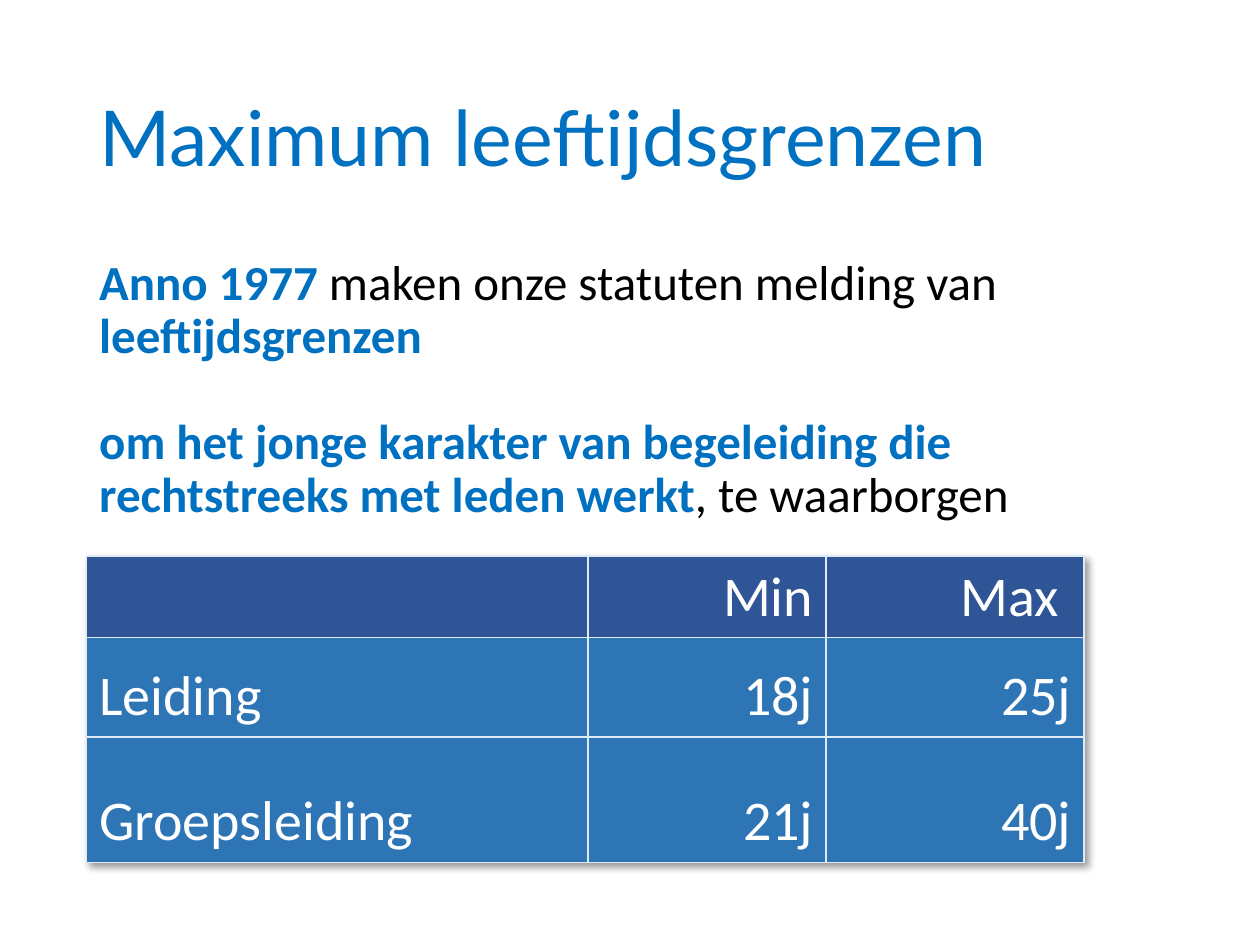
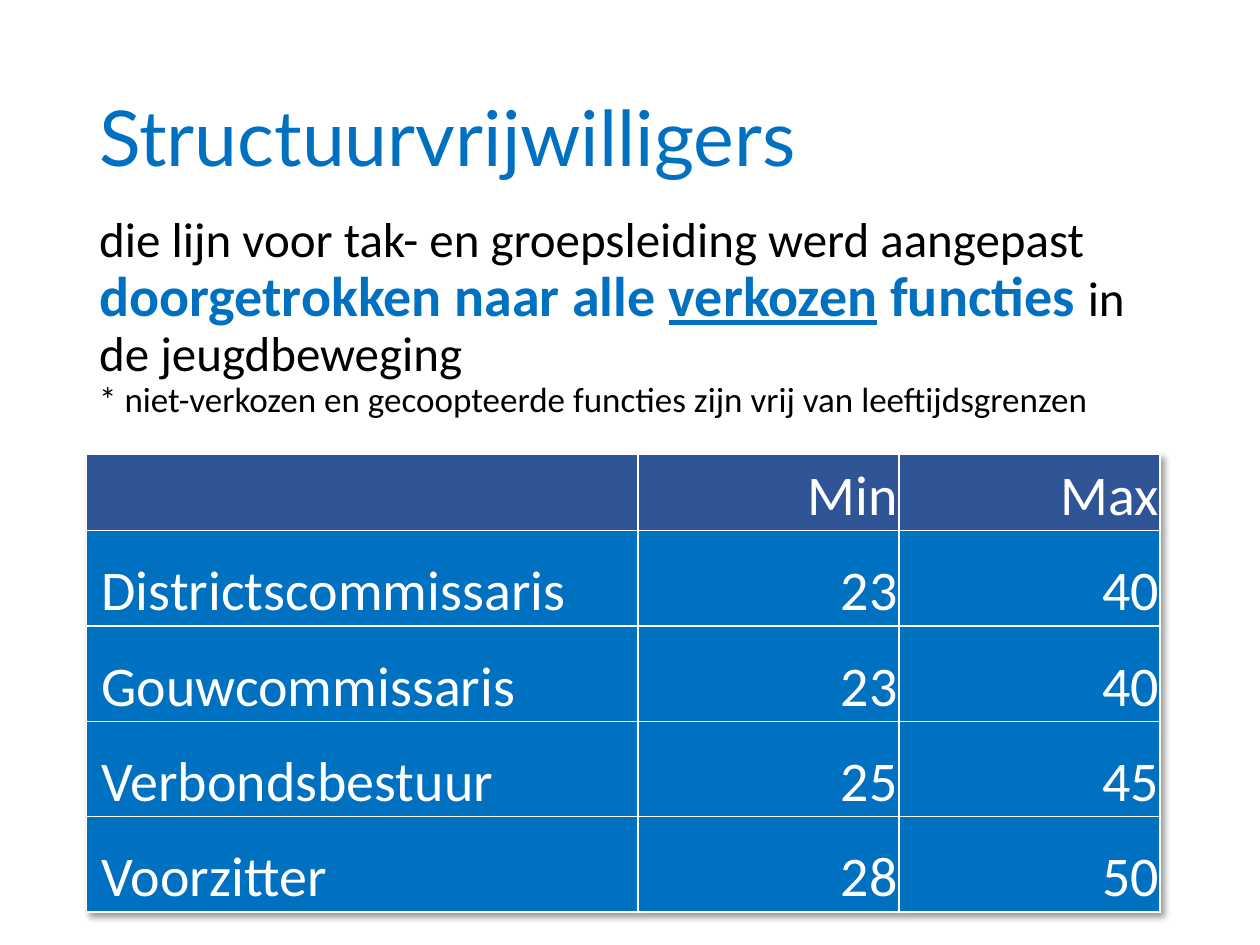
from pptx import Presentation
from pptx.dml.color import RGBColor
from pptx.enum.text import MSO_ANCHOR, MSO_AUTO_SIZE, PP_ALIGN
from pptx.oxml import parse_xml
from pptx.oxml.ns import nsdecls
from pptx.util import Pt

COLORS = {
    "accent": "0070C0",
    "text": "000000",
    "header": "2F5597",
    "row": "2E75B6",
    "pale": "DEEBF7",
    "white": "FFFFFF",
}
LEFT, WIDTH = 49.5, 621
STRONG = {"color": "accent", "bold": True}
LARGE = {**STRONG, "size": 32}


def rgb(name):
    return RGBColor.from_string(COLORS[name])


def add_run(p, text, size=28, font="Calibri", color="text", bold=False, underline=False):
    r = p.add_run()
    r.text = text
    r.font.size = Pt(size)
    r.font.name = font
    r.font.color.rgb = rgb(color)
    r.font.bold = bold
    r.font.underline = underline


class Deck:
    def __init__(self):
        self.prs = Presentation()
        self.prs.slide_width, self.prs.slide_height = Pt(720), Pt(540)
        self.s = None

    def slide(self, title):
        self.s = self.prs.slides.add_slide(self.prs.slide_layouts[1])
        tf = self.place(self.s.shapes.title, 28.75, 104.4)
        tf.vertical_anchor = MSO_ANCHOR.MIDDLE
        p = tf.paragraphs[0]
        p.alignment = PP_ALIGN.LEFT
        p.line_spacing = 0.9
        add_run(p, title, size=44, font="Lato", color="accent")

    def place(self, sp, top, height):
        sp.left, sp.top = Pt(LEFT), Pt(top)
        sp.width, sp.height = Pt(WIDTH), Pt(height)
        tf = sp.text_frame
        tf.word_wrap = True
        tf.auto_size = MSO_AUTO_SIZE.NONE
        return tf

    def body(self, top, height, paragraphs, gap=0):
        tf = self.place(self.s.placeholders[1], top, height)
        for i, runs in enumerate(paragraphs):
            p = tf.add_paragraph() if i else tf.paragraphs[0]
            pPr = p._p.get_or_add_pPr()
            pPr.set("marL", "0")
            pPr.set("indent", "0")
            pPr.append(parse_xml(f"<a:buNone {nsdecls('a')}/>"))
            p.line_spacing = 0.9
            p.space_before = Pt(gap if i else 0)
            for text, fmt in runs:
                add_run(p, text, **fmt)

    def table(self, top, cols, rows, data, fill, border, insets=None):
        frame = self.s.shapes.add_table(
            len(rows), len(cols), Pt(LEFT), Pt(top), Pt(sum(cols)), Pt(sum(rows)))
        tbl = frame.table
        tbl.horz_banding = False
        self.table_shadow(tbl)
        for col, width in zip(tbl.columns, cols):
            col.width = Pt(width)
        for row, height in zip(tbl.rows, rows):
            row.height = Pt(height)
        for i, values in enumerate(data):
            for j, text in enumerate(values):
                cell = tbl.cell(i, j)
                cell.fill.solid()
                cell.fill.fore_color.rgb = rgb(fill if i else "header")
                self.cell_border(cell, border)
                cell.vertical_anchor = MSO_ANCHOR.BOTTOM
                if insets:
                    (cell.margin_left, cell.margin_top,
                     cell.margin_right, cell.margin_bottom) = map(Pt, insets)
                if text:
                    p = cell.text_frame.paragraphs[0]
                    p.alignment = PP_ALIGN.RIGHT if j else PP_ALIGN.LEFT
                    add_run(p, text, size=32, color="white")

    def table_shadow(self, tbl):
        tbl._tbl.tblPr.insert(0, parse_xml(
            f"<a:effectLst {nsdecls('a')}>"
            '<a:outerShdw blurRad="50800" dist="38100" dir="2700000" algn="tl" rotWithShape="0">'
            f'<a:srgbClr val="{COLORS["text"]}"><a:alpha val="40000"/></a:srgbClr>'
            "</a:outerShdw></a:effectLst>"))

    def cell_border(self, cell, color):
        tcPr = cell._tc.get_or_add_tcPr()
        for i, side in enumerate("LRTB"):
            tcPr.insert(i, parse_xml(
                f'<a:ln{side} {nsdecls("a")} w="{Pt(1)}"><a:solidFill>'
                f'<a:srgbClr val="{COLORS[color]}"/></a:solidFill></a:ln{side}>'))


def main():
    deck = Deck()

    deck.slide("Maximum leeftijdsgrenzen")
    deck.body(144, 131.75, [
        [("Anno 1977 ", STRONG), ("maken onze statuten melding van ", {}),
         ("leeftijdsgrenzen", STRONG)],
        [("om het jonge karakter van begeleiding die rechtstreeks met leden werkt", STRONG),
         (", te waarborgen", {})],
    ], gap=30.5)
    deck.table(317.75, [286.5, 136, 147.5], [46.5, 57, 71.5], [
        ["", "Min", "Max "],
        ["Leiding", "18j", "25j"],
        ["Groepsleiding", "21j", "40j"],
    ], fill="row", border="pale")

    deck.slide("Structuurvrijwilligers")
    deck.body(119.5, 356.5, [
        [("die lijn voor tak- en groepsleiding werd aangepast ", {}),
         ("doorgetrokken naar alle ", LARGE),
         ("verkozen", {**LARGE, "underline": True}),
         (" functies ", LARGE),
         ("in de jeugdbeweging", {})],
        [("* niet-verkozen en gecoopteerde functies zijn vrij van leeftijdsgrenzen",
          {"size": 20})],
    ])
    deck.table(259.5, [315, 149.25, 149.25], [43.75] + [54.5] * 4, [
        ["", "Min", "Max"],
        ["Districtscommissaris", "23", "40"],
        ["Gouwcommissaris", "23", "40"],
        ["Verbondsbestuur", "25", "45"],
        ["Voorzitter", "28", "50"],
    ], fill="accent", border="white", insets=(8.5, 0.75, 0.75, 0))

    deck.prs.save("out.pptx")


if __name__ == "__main__":
    main()
